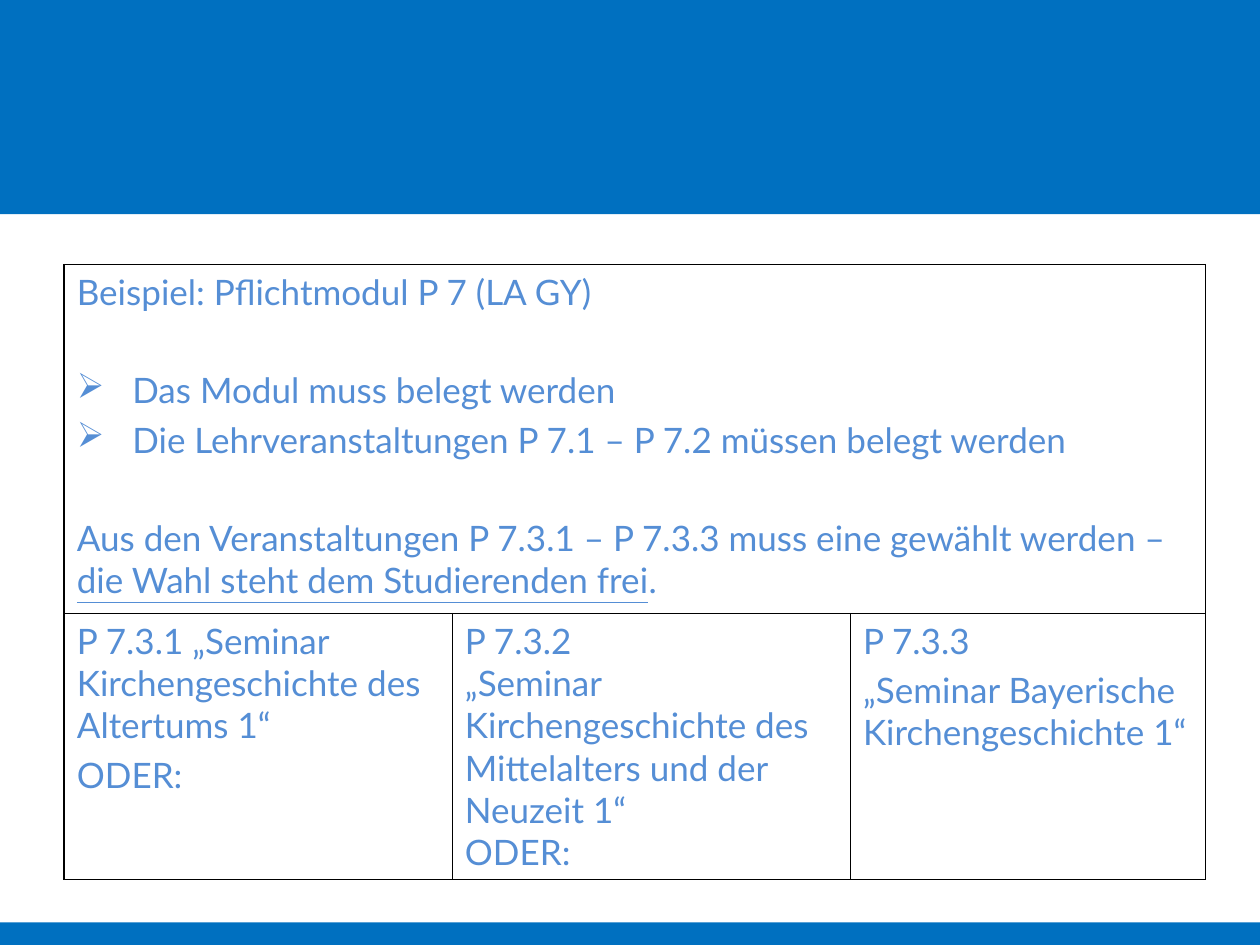
from dataclasses import dataclass

from lxml.etree import SubElement as Sub
from pptx import Presentation
from pptx.dml.color import RGBColor as Rgb
from pptx.enum.shapes import MSO_SHAPE as Shape
from pptx.oxml.ns import qn
from pptx.util import Emu, Inches, Pt

BLUE, TEXT, BLACK = "0070C0", "558ED5", "000000"
FONT, SIZE = "Lato", 20
NEAR, FAR = 4, 32
HANG = 0.44


@dataclass
class Para:
    """A paragraph made of runs, with those between underscores underlined."""
    text: str
    gap: int = 0
    mark: str = ""


@dataclass
class Band:
    """A full-width bar, as shares of the slide's height."""
    top: float
    tall: float


BANDS = [Band(0, 0.2267), Band(0.976, 0.024)]
COLS = [3.08, 3.16, 2.82]
ROWS = [2.77, 2.1]
INTRO = [
    Para("Beispiel: Pflichtmodul P 7 (LA GY)"),
    Para("Das Modul muss belegt werden", FAR, "➢"),
    Para("Die Lehrveranstaltungen P 7.1 – P 7.2 müssen belegt werden", NEAR, "➢"),
    Para("Aus den Veranstaltungen P 7.3.1 – P 7.3.3 muss eine gewählt werden – "
         "_die Wahl steht dem Studierenden frei_.", FAR),
]
CHOICES = [
    [Para("P 7.3.1 „Seminar Kirchengeschichte des Altertums 1“"),
     Para("ODER:", NEAR)],
    [Para("P 7.3.2"),
     Para("„Seminar Kirchengeschichte des Mittelalters und der Neuzeit 1“"),
     Para("ODER:")],
    [Para("P 7.3.3"),
     Para("„Seminar Bayerische Kirchengeschichte 1“", NEAR)],
]


def paint(fill, tint: str) -> None:
    """Give a fill one solid colour."""
    fill.solid()
    fill.fore_color.rgb = Rgb.from_string(tint)


def add_band(slide, band: Band, wide: int, high: int) -> None:
    """Draw a blue bar across the slide."""
    bar = slide.shapes.add_shape(Shape.RECTANGLE, 0, Emu(int(band.top * high)),
                                 wide, Emu(int(band.tall * high)))
    bar.shadow.inherit = False
    paint(bar.fill, BLUE)
    bar.line.fill.background()


def add_mark(para, mark: str) -> None:
    """Hang a bullet in front of a paragraph."""
    props = para._p.get_or_add_pPr()
    props.set("marL", str(Inches(HANG)))
    props.set("indent", str(-Inches(HANG)))
    tint = Sub(props, qn("a:buClr"))
    Sub(tint, qn("a:srgbClr"), val=TEXT)
    Sub(props, qn("a:buChar"), char=mark)


def write(para, text: str, *, gap: int = 0, mark: str = "", size: int = SIZE,
          tint: str = TEXT) -> None:
    """Fill a paragraph with formatted runs."""
    if mark:
        add_mark(para, mark)
    para.space_before = Pt(gap)
    for i, part in enumerate(text.split("_")):
        run = para.add_run()
        run.text = part
        font = run.font
        font.name, font.size = FONT, Pt(size)
        font.color.rgb = Rgb.from_string(tint)
        if i % 2:
            font.underline = True


def frame(cell, tint: str = BLACK, width: float = 1) -> None:
    """Put a border on all four sides of a cell and leave it unfilled."""
    props = cell._tc.get_or_add_tcPr()
    for side in ("lnL", "lnR", "lnT", "lnB"):
        line = Sub(props, qn(f"a:{side}"), w=str(Pt(width)))
        Sub(Sub(line, qn("a:solidFill")), qn("a:srgbClr"), val=tint)
    cell.fill.background()


def fill_cell(cell, paras: list[Para]) -> None:
    """Write a list of paragraphs into a cell."""
    body = cell.text_frame
    for i, item in enumerate(paras):
        para = body.add_paragraph() if i else body.paragraphs[0]
        write(para, item.text, gap=item.gap, mark=item.mark)


def add_grid(slide) -> None:
    """Draw the module table with its merged top row."""
    grid = slide.shapes.add_table(
        len(ROWS), len(COLS), Inches(0.51), Inches(2.1),
        Inches(sum(COLS)), Inches(sum(ROWS))).table
    grid.first_row = grid.horz_banding = False
    for col, wide in zip(grid.columns, COLS):
        col.width = Inches(wide)
    for row, tall in zip(grid.rows, ROWS):
        row.height = Inches(tall)
    for cell in grid.iter_cells():
        frame(cell)
    top = grid.cell(0, 0)
    top.merge(grid.cell(0, len(COLS) - 1))
    fill_cell(top, INTRO)
    for i, paras in enumerate(CHOICES):
        fill_cell(grid.cell(1, i), paras)


def main() -> None:
    """Build and save the slide."""
    deck = Presentation()
    deck.slide_width, deck.slide_height = Inches(10), Inches(7.5)
    slide = deck.slides.add_slide(deck.slide_layouts[6])
    for band in BANDS:
        add_band(slide, band, deck.slide_width, deck.slide_height)
    add_grid(slide)
    deck.save("out.pptx")


if __name__ == "__main__":
    main()
